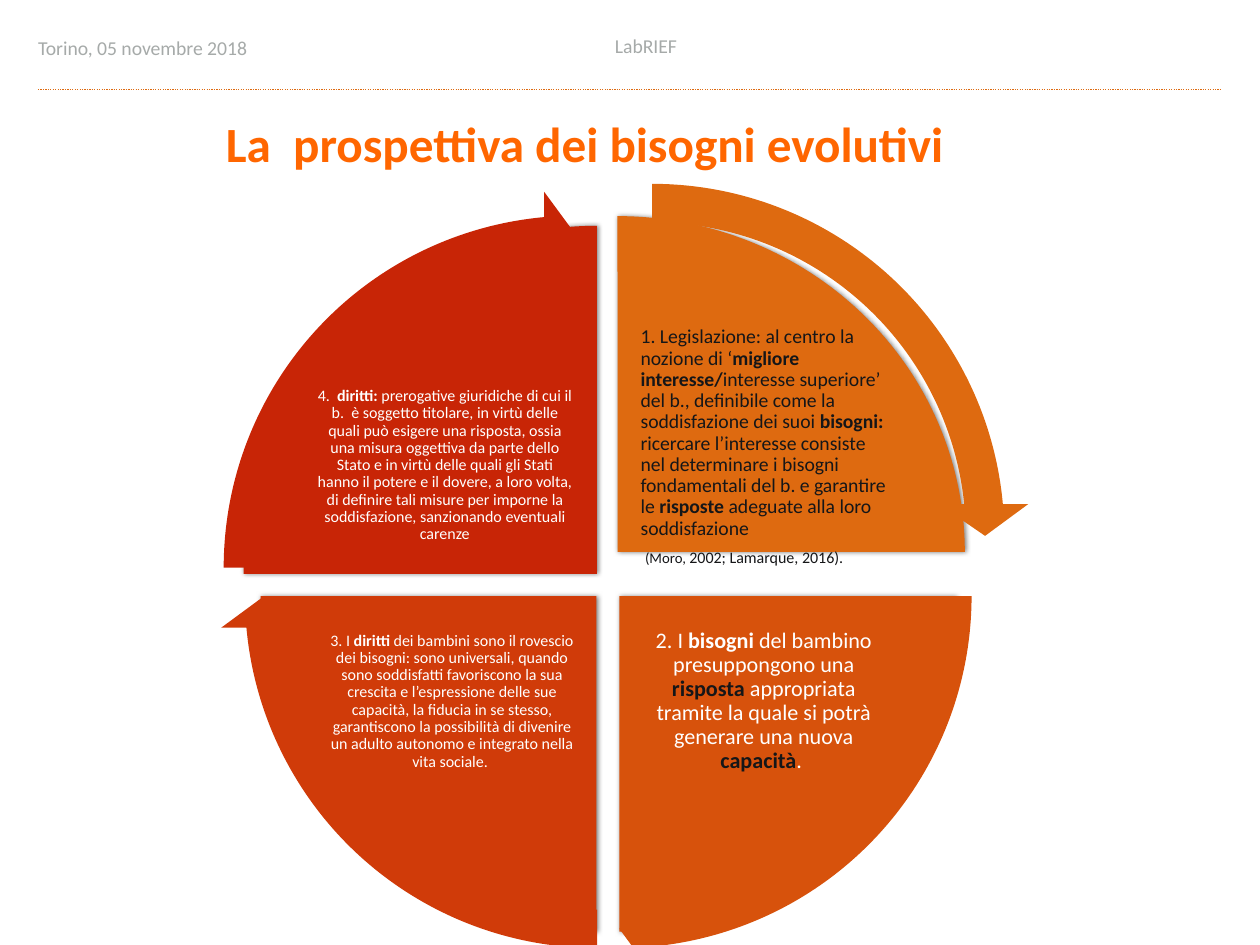
from dataclasses import dataclass
from typing import Any

from lxml import etree
from pptx import Presentation, util as u
from pptx.dml.color import RGBColor
from pptx.enum import dml, shapes, text
from pptx.oxml import ns

COLOURS = {
    "grey": "A6AAA9", "ink": "151618", "white": "FFFFFF", "title": "FF6600",
    "amber": "DE6A10", "orange": "D7520C", "vermilion": "D03B09", "red": "C82506",
}
WIDTH, HEIGHT = u.Inches(14.22), u.Inches(10.67)
ARROW_SIZE = (59.92, 79.85)
# Angles in the units of the shape adjustments: 54 is a quarter turn
QUARTER, TURN, HEAD = 54, 216, 3.275
LEFT, CENTRE = text.PP_ALIGN.LEFT, text.PP_ALIGN.CENTER


@dataclass
class Box:
    """Left, top, width and height as percentages of the slide."""
    left: float
    top: float
    width: float
    height: float

    def lengths(self) -> tuple[int, int, int, int]:
        return (across(self.left), down(self.top), across(self.width), down(self.height))


@dataclass
class Run:
    words: str
    bold: bool = False
    colour: str = ""
    size: float = 0


@dataclass
class Quadrant:
    colour: str
    pie: Box
    arrow: tuple[float, float]
    label: Box
    size: float
    ink: str
    align: Any
    inset: float
    paragraphs: list[list[Run]]


def across(percent: float) -> int:
    return round(WIDTH * percent / 100)


def down(percent: float) -> int:
    return round(HEIGHT * percent / 100)


def rgb(name: str) -> RGBColor:
    return RGBColor.from_string(COLOURS[name])


def apply(target: Any, values: dict[str, Any]) -> None:
    for name, value in values.items():
        setattr(target, name, value)


def write(shape: Any, paragraphs: list[list[Run]], size: float, colour: str,
          layout: dict[str, Any], inset: float = 0, anchor: Any = text.MSO_ANCHOR.TOP) -> None:
    frame = shape.text_frame
    margin = u.Inches(inset)
    apply(frame, {"word_wrap": True, "vertical_anchor": anchor,
                  "margin_left": margin, "margin_right": margin,
                  "margin_top": margin, "margin_bottom": margin})
    for index, runs in enumerate(paragraphs):
        paragraph = frame.add_paragraph() if index else frame.paragraphs[0]
        apply(paragraph, layout)
        for item in runs:
            run = paragraph.add_run()
            run.text = item.words
            apply(run.font, {"name": "Calibri", "bold": item.bold,
                             "size": u.Pt(item.size or size)})
            run.font.color.rgb = rgb(item.colour or colour)


def add_solid(slide: Any, kind: Any, box: Box, colour: str, adjustments: list[float]) -> Any:
    shape = slide.shapes.add_shape(kind, *box.lengths())
    shape.shadow.inherit = False
    shape.fill.solid()
    shape.fill.fore_color.rgb = rgb(colour)
    shape.line.fill.background()
    for index, value in enumerate(adjustments):
        shape.adjustments[index] = value
    return shape


def add_shadow(shape: Any) -> None:
    effects = shape._element.spPr.find(ns.qn("a:effectLst"))
    shadow = etree.SubElement(effects, ns.qn("a:outerShdw"), blurRad=str(u.Pt(4)),
                              dist=str(u.Pt(1)), dir="0", rotWithShape="0")
    black = etree.SubElement(shadow, ns.qn("a:srgbClr"), val="000000")
    etree.SubElement(black, ns.qn("a:alpha"), val="50000")


def add_label(slide: Any, quadrant: Quadrant) -> None:
    layout = {"alignment": quadrant.align, "line_spacing": 0.9,
              "space_after": u.Pt(round(quadrant.size * 0.35, 1))}
    write(slide.shapes.add_textbox(*quadrant.label.lengths()), quadrant.paragraphs,
          quadrant.size, quadrant.ink, layout, quadrant.inset, text.MSO_ANCHOR.MIDDLE)


def add_header(slide: Any) -> None:
    for words, box in (("Torino, 05 novembre 2018", Box(3.02, 3.94, 23.28, 11.06)),
                       ("LabRIEF", Box(48.8, 3.75, 11.25, 5.34))):
        write(slide.shapes.add_textbox(*box.lengths()), [[Run(words)]], 16, "grey",
              {"line_spacing": u.Pt(18)})
    rule = slide.shapes.add_connector(shapes.MSO_CONNECTOR.STRAIGHT, across(3.02), down(9.47),
                                      across(96.84), down(9.47))
    apply(rule.line, {"width": u.Pt(1), "dash_style": dml.MSO_LINE.ROUND_DOT})
    rule.line.color.rgb = rgb("amber")
    etree.SubElement(rule._element.spPr, ns.qn("a:effectLst"))


def add_title(slide: Any) -> None:
    title = slide.shapes.title
    apply(title, dict(zip(("left", "top", "width", "height"),
                          Box(17.51, 14.81, 63.78, 4.31).lengths())))
    write(title, [[Run("La  prospettiva dei bisogni evolutivi", True)]], 40, "title",
          {"alignment": LEFT, "line_spacing": u.Pt(20)}, 0.06, text.MSO_ANCHOR.MIDDLE)
    title.text_frame.auto_size = text.MSO_AUTO_SIZE.SHAPE_TO_FIT_TEXT


# Clockwise from the upper right
QUADRANTS = [
    Quadrant("amber", Box(21.45, 22.87, 55.13, 71.04), (21.8, 16.78),
             Box(50.7, 37.58, 20.32, 19.49), 16, "ink", LEFT, 0.02, [
                 [Run("1. Legislazione: al centro la nozione di ‘"),
                  Run("migliore interesse/", True),
                  Run("interesse superiore’ del b., definibile come la soddisfazione dei suoi "),
                  Run("bisogni: ", True),
                  Run("ricercare l’interesse consiste nel determinare i bisogni fondamentali "
                      "del b. e garantire le "),
                  Run("risposte", True), Run(" adeguate alla loro soddisfazione")],
                 [Run(" "), Run("(Moro, ", size=12), Run("2002; Lamarque, 2016).", size=13)]]),
    Quadrant("orange", Box(22.5, 27.55, 53.31, 71.04), (19.2, 23.15),
             Box(50.77, 64.48, 19.69, 19.49), 18, "white", CENTRE, 0.03, [
                 [Run("2. I "), Run("bisogni", True),
                  Run(" del bambino presuppongono una "), Run("risposta", True, "ink"),
                  Run(" appropriata tramite la quale si potrà generare una nuova "),
                  Run("capacità", True, "ink"), Run(". ")]]),
    Quadrant("vermilion", Box(20.68, 27.55, 53.31, 71.04), (17.44, 23.15),
             Box(26.02, 64.48, 19.69, 19.49), 13, "white", CENTRE, 0.02, [
                 [Run("3. I "), Run("diritti", True),
                  Run(" dei bambini sono il rovescio dei bisogni: sono universali, quando sono "
                      "soddisfatti favoriscono la sua crescita e l’espressione delle sue "
                      "capacità, la fiducia in se stesso, garantiscono la possibilità di "
                      "divenire un adulto autonomo e integrato nella vita sociale. ")]]),
    Quadrant("red", Box(19.34, 23.9, 56.05, 73.66), (15.75, 20.15),
             Box(24.96, 39.18, 20.68, 20.15), 13, "white", CENTRE, 0.02, [
                 [Run("4.  "), Run("diritti: ", True),
                  Run("prerogative giuridiche di cui il b.  è soggetto titolare, in virtù delle "
                      "quali può esigere una risposta, ossia una misura oggettiva da parte "
                      "dello Stato e in virtù delle quali gli Stati hanno il potere e il "
                      "dovere, a loro volta, di definire tali misure per imporne la "
                      "soddisfazione, sanzionando eventuali carenze")]]),
]


def main() -> None:
    presentation = Presentation()
    apply(presentation, {"slide_width": WIDTH, "slide_height": HEIGHT})
    slide = presentation.slides.add_slide(presentation.slide_layouts[5])
    add_header(slide)
    add_title(slide)

    # Pies with their texts, then the arrows around them
    starts = [(3 + index) * QUARTER % TURN for index in range(len(QUADRANTS))]
    for quadrant, start in zip(QUADRANTS, starts):
        add_shadow(add_solid(slide, shapes.MSO_SHAPE.PIE, quadrant.pie, quadrant.colour,
                             [start, (start + QUARTER) % TURN]))
        add_label(slide, quadrant)
    for quadrant, start in zip(QUADRANTS, starts):
        add_solid(slide, shapes.MSO_SHAPE.CIRCULAR_ARROW, Box(*quadrant.arrow, *ARROW_SIZE),
                  quadrant.colour, [0.051, HEAD, start + QUARTER - HEAD, start, 0.059])
    presentation.save("out.pptx")


if __name__ == "__main__":
    main()
